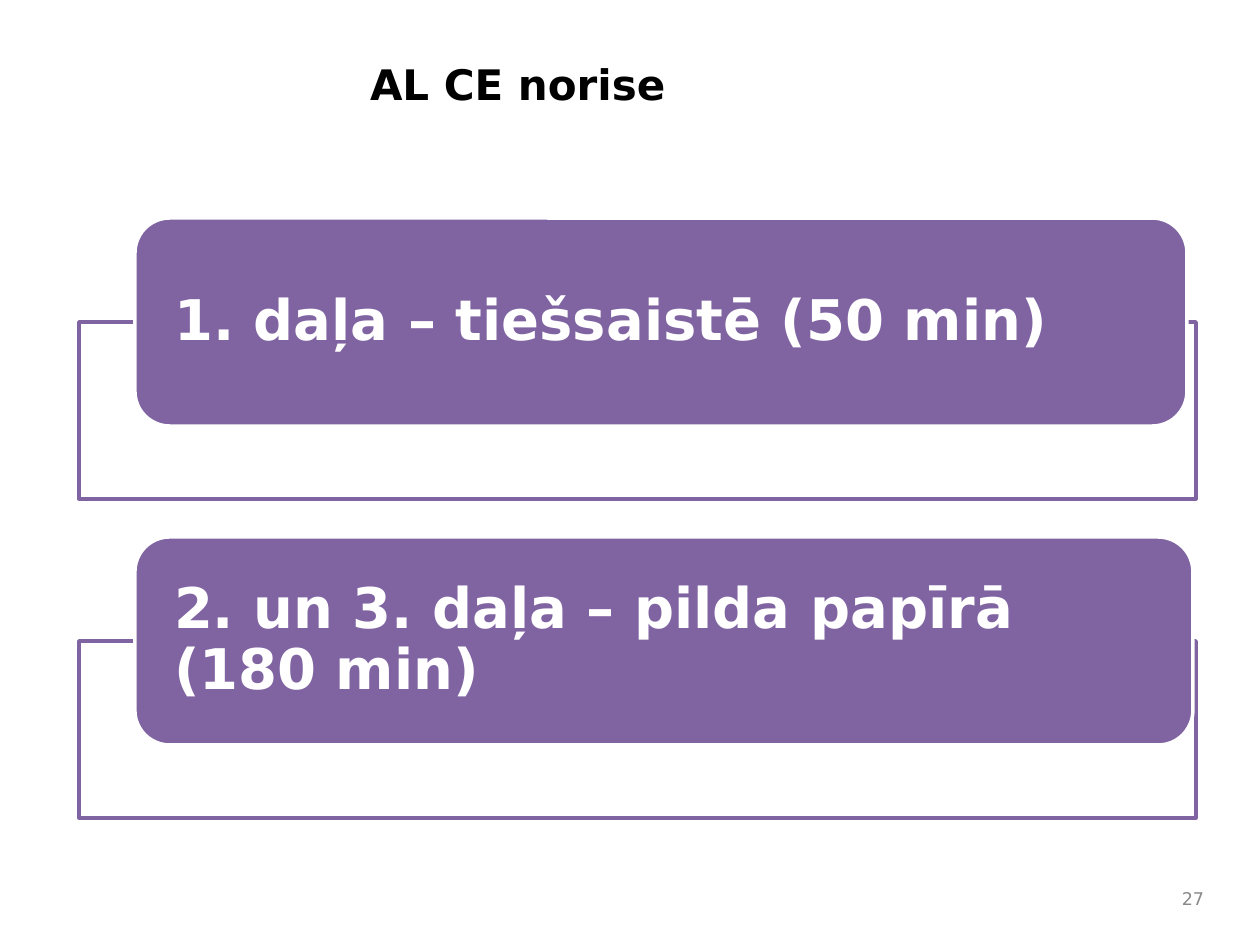
from lxml import etree
from pptx import Presentation
from pptx.dml.color import RGBColor
from pptx.enum.shapes import MSO_SHAPE
from pptx.enum.text import MSO_ANCHOR, PP_ALIGN
from pptx.oxml.ns import qn
from pptx.util import Emu, Pt

RECT, ROUND = MSO_SHAPE.RECTANGLE, MSO_SHAPE.ROUNDED_RECTANGLE
TOP, MID = MSO_ANCHOR.TOP, MSO_ANCHOR.MIDDLE
LEFT, RIGHT = PP_ALIGN.LEFT, PP_ALIGN.RIGHT

FONT = "DejaVu Sans"
WHITE, BLACK, GREY, PURPLE = "FFFFFF", "000000", "898989", "8064A2"
TITLE = "AL CE norise"
NUMBER = "27"
PARTS = [
    ("1. daļa – tiešsaistē (50 min)", 1052),
    ("2. un 3. daļa – pilda papīrā (180 min)", 1058),
]
FIRST, STEP = 218, 319
FRAME_X, FRAME_W, FRAME_H = 79, 1117, 177
BAR_X, BAR_H = 135, 208


def px(n):
    return Emu(round(n * 914400 / 126))


def rgb(code):
    return RGBColor.from_string(code)


def write(shape, text, size, color, bold=False, align=LEFT, anchor=TOP, pad=(13, 6), gap=1):
    frame = shape.text_frame
    frame.word_wrap = True
    frame.vertical_anchor = anchor
    frame.margin_left = frame.margin_right = px(pad[0])
    frame.margin_top = frame.margin_bottom = px(pad[1])
    para = frame.paragraphs[0]
    para.alignment = align
    para.line_spacing = gap
    run = para.add_run()
    run.text = text
    font = run.font
    font.name, font.size, font.bold = FONT, Pt(size), bold
    font.color.rgb = rgb(color)


def block(slide, kind, box, fill, line):
    shape = slide.shapes.add_shape(kind, *map(px, box))
    shape.shadow.inherit = False
    shape.fill.solid()
    shape.fill.fore_color.rgb = rgb(fill)
    shape.line.color.rgb = rgb(line)
    shape.line.width = Pt(2)
    return shape


def fade(shape, share):
    tint = shape.fill._xPr.find(qn("a:solidFill"))[0]
    etree.SubElement(tint, qn("a:alpha"), val=str(share * 1000))


def main():
    """Build the slide with the exam parts."""
    deck = Presentation()
    deck.slide_width, deck.slide_height = px(1260), px(945)
    slide = deck.slides.add_slide(deck.slide_layouts[6])

    title = slide.shapes.add_textbox(*map(px, (357, 53, 840, 142)))
    write(title, TITLE, 24, BLACK, bold=True)

    for i, (text, width) in enumerate(PARTS):
        top = FIRST + i * STEP
        mid = top + BAR_H // 2
        frame = block(slide, RECT, (FRAME_X, mid, FRAME_W, FRAME_H), WHITE, PURPLE)
        fade(frame, 90)
        bar = block(slide, ROUND, (BAR_X, top, width, BAR_H), PURPLE, WHITE)
        write(bar, text, 32, WHITE, bold=True, anchor=MID, pad=(29, 0), gap=0.9)

    number = slide.shapes.add_textbox(*map(px, (1140, 871, 77, 54)))
    write(number, NUMBER, 10, GREY, align=RIGHT, anchor=MID)

    deck.save("out.pptx")


if __name__ == "__main__":
    main()
